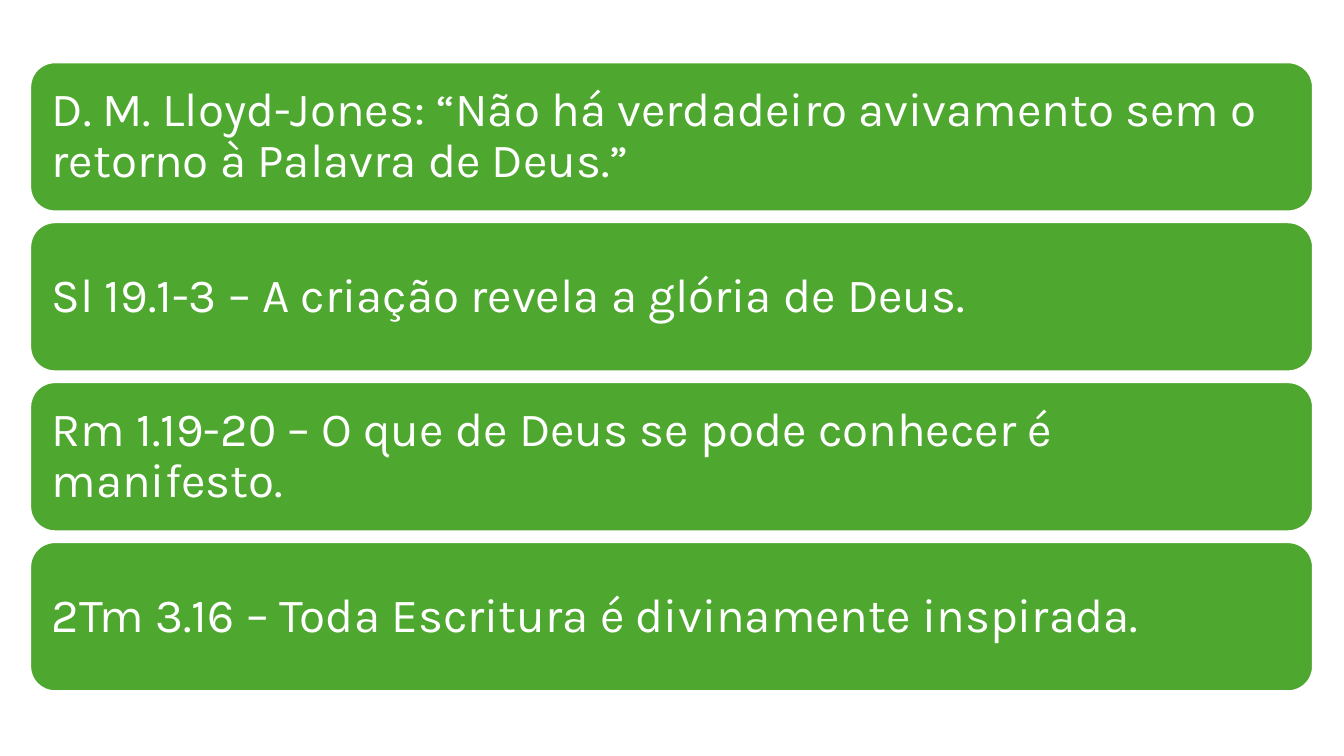
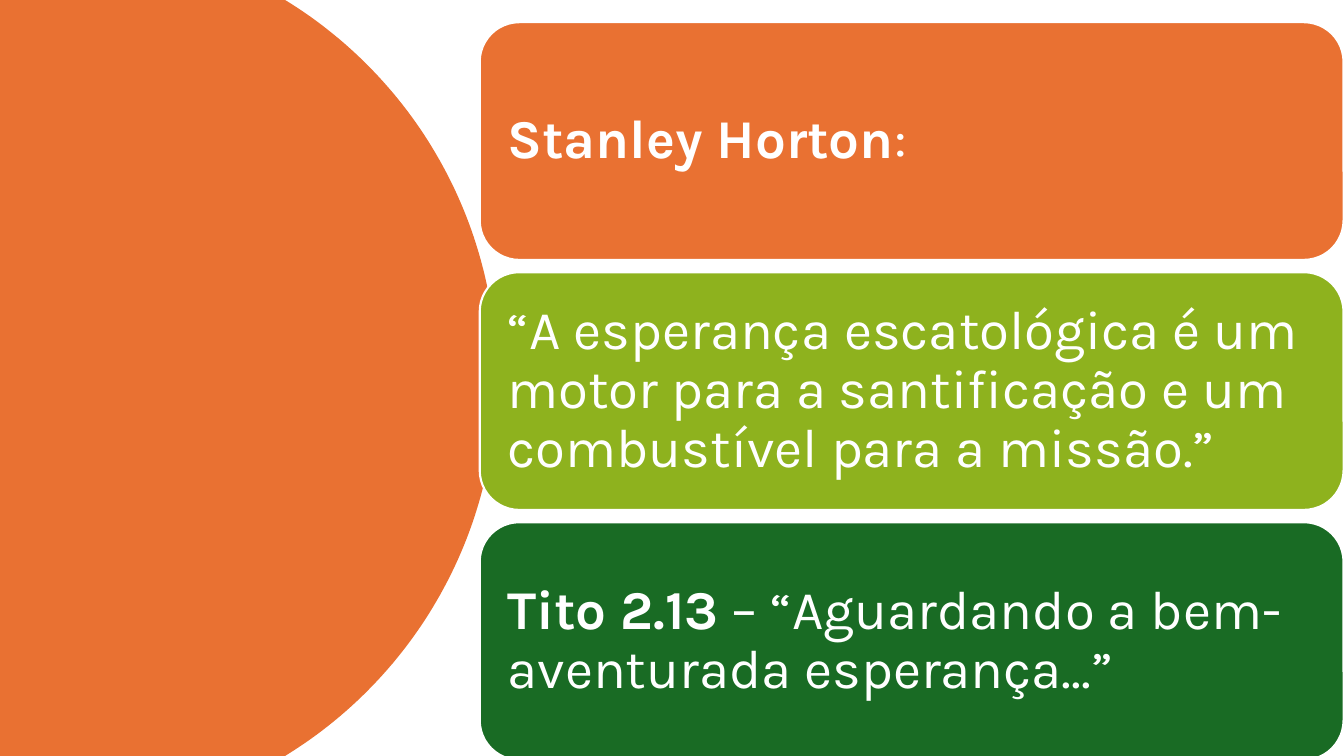
from dataclasses import dataclass
from math import asin, cos, sin

from pptx import Presentation
from pptx.dml.color import RGBColor
from pptx.enum.shapes import MSO_SHAPE
from pptx.enum.text import MSO_ANCHOR, PP_ALIGN
from pptx.util import Cm, Pt

FONT = "Karla"
WHITE, GREEN, ORANGE = "FFFFFF", "4EA72E", "E97132"
LIME, FOREST = "8EB21E", "196B24"
WIDTH, HEIGHT = 33.87, 19.05


@dataclass(frozen=True)
class Card:
    text: str
    color: str = GREEN
    lead: str = ""


@dataclass(frozen=True)
class Stack:
    left: float
    top: float
    width: float
    height: float
    gap: float
    inset: float
    size: int


VERSES = Stack(0.76, 1.57, 32.33, 3.76, 0.27, 0.36, 34)
QUOTES = Stack(12.09, 0.56, 21.77, 5.99, 0.31, 0.41, 39)

VERSE_CARDS = [
    Card("D. M. Lloyd-Jones: “Não há verdadeiro avivamento sem o retorno à Palavra de Deus.”"),
    Card("Sl 19.1-3 – A criação revela a glória de Deus."),
    Card("Rm 1.19-20 – O que de Deus se pode conhecer é manifesto."),
    Card("2Tm 3.16 – Toda Escritura é divinamente inspirada."),
]
QUOTE_CARDS = [
    Card(":", ORANGE, lead="Stanley Horton"),
    Card("“A esperança escatológica é um motor para a santificação e um combustível para a missão.”", LIME),
    Card(" – “Aguardando a bem-aventurada esperança...”", FOREST, lead="Tito 2.13"),
]


def rgb(color: str) -> RGBColor:
    return RGBColor.from_string(color)


def paint(sp, color: str) -> None:
    sp.shadow.inherit = False
    sp.fill.solid()
    sp.fill.fore_color.rgb = rgb(color)


def add_run(p, text: str, *, size: int, bold: bool = False, color: str = WHITE) -> None:
    r = p.add_run()
    r.text = text
    r.font.name = FONT
    r.font.size = Pt(size)
    r.font.bold = bold
    r.font.color.rgb = rgb(color)


def add_card(s, card: Card, stack: Stack, top: float) -> None:
    sp = s.shapes.add_shape(
        MSO_SHAPE.ROUNDED_RECTANGLE,
        Cm(stack.left), Cm(top), Cm(stack.width), Cm(stack.height),
    )
    paint(sp, card.color)
    sp.line.color.rgb = rgb(WHITE)
    sp.line.width = Pt(1.5)
    tf = sp.text_frame
    tf.word_wrap = True
    tf.vertical_anchor = MSO_ANCHOR.MIDDLE
    tf.margin_left = tf.margin_right = tf.margin_top = tf.margin_bottom = Cm(stack.inset)
    p = tf.paragraphs[0]
    p.alignment = PP_ALIGN.LEFT
    p.line_spacing = 0.9
    if card.lead:
        add_run(p, card.lead, size=stack.size, bold=True)
    add_run(p, card.text, size=stack.size)


def add_stack(s, cards: list[Card], stack: Stack) -> None:
    for i, card in enumerate(cards):
        add_card(s, card, stack, stack.top + i * (stack.height + stack.gap))


def add_cropped_disc(s, *, center: float, radius: float, color: str, steps: int = 120) -> None:
    middle = HEIGHT / 2
    reach = asin(middle / radius)
    angles = [reach * (2 * i / steps - 1) for i in range(steps + 1)]
    arc = [(Cm(center + radius * cos(a)), Cm(middle + radius * sin(a))) for a in angles]
    outline = s.shapes.build_freeform(0, 0)
    outline.add_line_segments([*arc, (0, Cm(HEIGHT))], close=True)
    sp = outline.convert_to_shape()
    paint(sp, color)
    sp.line.fill.background()


def main() -> None:
    prs = Presentation()
    prs.slide_width, prs.slide_height = Cm(WIDTH), Cm(HEIGHT)
    blank = prs.slide_layouts[6]

    s = prs.slides.add_slide(blank)
    add_stack(s, VERSE_CARDS, VERSES)

    s = prs.slides.add_slide(blank)
    add_cropped_disc(s, center=1.35, radius=11.17, color=ORANGE)
    add_stack(s, QUOTE_CARDS, QUOTES)

    prs.save("out.pptx")


if __name__ == "__main__":
    main()
